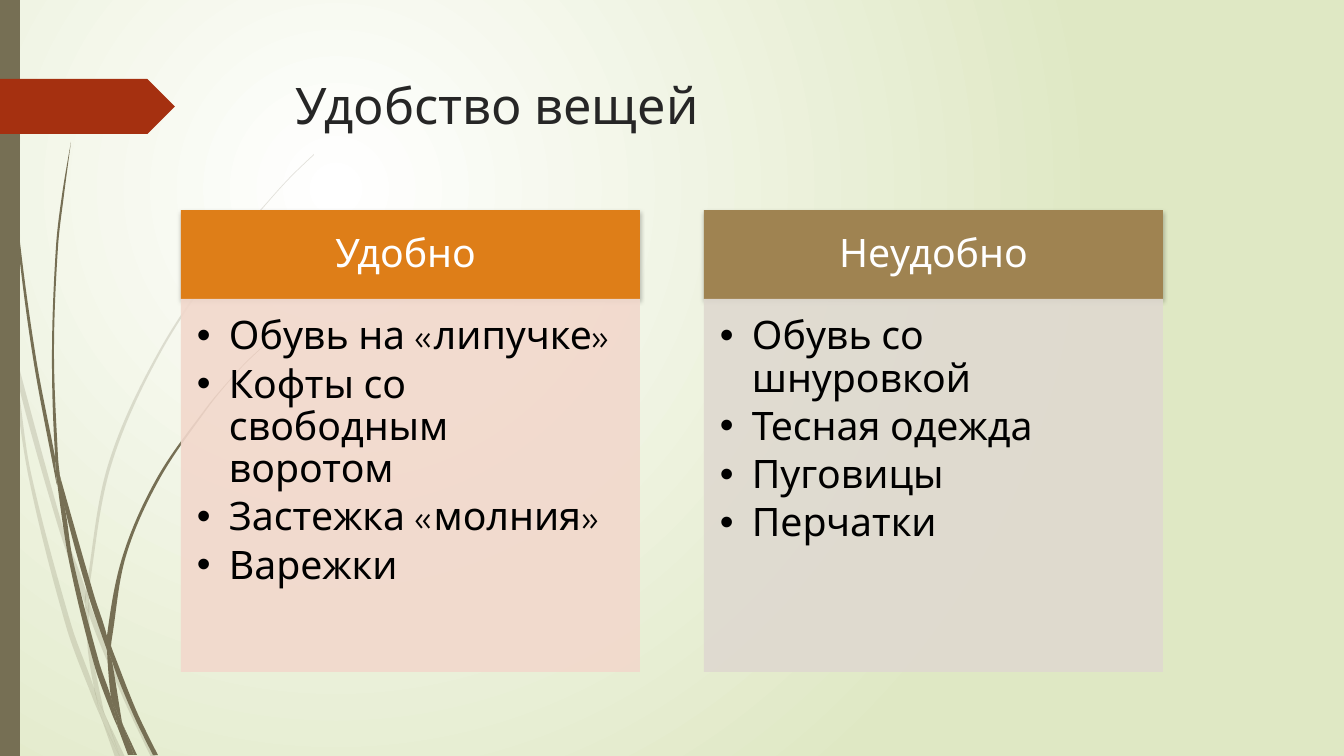
from dataclasses import dataclass
from math import hypot

from lxml.etree import SubElement
from pptx import Presentation
from pptx.dml.color import RGBColor
from pptx.enum.shapes import MSO_SHAPE
from pptx.enum.text import MSO_ANCHOR, PP_ALIGN
from pptx.oxml import parse_xml
from pptx.oxml.ns import nsdecls, qn
from pptx.shapes.autoshape import Shape
from pptx.slide import Slide
from pptx.util import Pt

EMU_PER_PX = 914400 / 100.8
FONT = "League Spartan"
OLIVE = "766F54"

Point = tuple[int, int]


@dataclass
class Grass:
    opacity: int
    pieces: list[list[Point]]


@dataclass
class Column:
    heading: str
    items: list[str]
    heading_fill: str
    body_fill: str


PALE_GRASS = Grass(20, [
    [(11, 353), (9, 325), (0, 284), (0, 301), (10, 347)],
    [(58, 526), (85, 604), (86, 591), (62, 524), (14, 348), (17, 379)],
    [(93, 612), (89, 601), (89, 615), (124, 700), (151, 757), (156, 757), (128, 698)],
    [(120, 757), (125, 757), (106, 717)],
    [(94, 688), (71, 624), (31, 473), (17, 379), (11, 353), (28, 474), (66, 626), (93, 699), (102, 720), (100, 713)],
    [(85, 604), (88, 651), (94, 688), (97, 698), (106, 717), (104, 712), (92, 651), (89, 615), (89, 613)],
    [(89, 589), (111, 466), (161, 352), (231, 247), (270, 200), (292, 176), (314, 155), (314, 154),
     (291, 176), (270, 199), (230, 246), (159, 351), (108, 465), (86, 589), (86, 591), (89, 601)],
    [(102, 720), (115, 757), (120, 757)],
    [(89, 613), (89, 615), (89, 601), (86, 591), (85, 604)],
    [(97, 698), (94, 688), (100, 713), (102, 720), (120, 757), (106, 717)],
])
DARK_GRASS = Grass(100, [
    [(7, 111), (17, 235), (33, 358), (56, 481), (57, 485), (55, 461), (55, 457),
     (36, 358), (19, 234), (8, 110), (5, 48), (4, 0), (3, 0), (4, 48)],
    [(89, 597), (107, 650), (107, 636), (94, 595), (60, 476), (65, 509)],
    [(114, 654), (111, 646), (112, 661), (133, 714), (153, 755), (158, 755), (137, 712)],
    [(111, 697), (99, 662), (73, 560), (65, 509), (57, 481), (69, 561), (94, 664), (112, 714), (118, 728), (117, 723)],
    [(60, 476), (58, 457), (54, 352), (58, 247), (64, 195), (71, 142), (62, 195), (56, 247), (52, 352), (55, 453)],
    [(134, 755), (137, 755), (123, 725)],
    [(57, 481), (65, 509), (60, 476), (55, 453), (55, 457)],
    [(112, 638), (126, 556), (159, 480), (207, 409), (233, 377), (247, 362), (263, 347), (262, 347),
     (247, 361), (233, 376), (206, 408), (157, 478), (123, 555), (107, 636), (111, 646)],
    [(118, 728), (128, 755), (132, 755)],
    [(107, 650), (111, 697), (117, 712), (123, 725), (122, 722), (112, 661), (110, 656)],
    [(107, 650), (110, 656), (112, 661), (111, 646), (107, 636)],
    [(117, 712), (111, 697), (117, 723), (118, 728), (131, 755), (134, 755), (123, 725)],
])

COLUMNS = [
    Column("Удобно ",
           ["Обувь на «липучке»", "Кофты со свободным воротом", "Застежка «молния»", "Варежки"],
           "DE7E18", "F2D8CC"),
    Column("Неудобно",
           ["Обувь со шнуровкой", "Тесная одежда", "Пуговицы", "Перчатки"],
           "9F8351", "DFD9D0"),
]
COLUMN_LEFT, COLUMN_WIDTH, COLUMN_GAP = 181, 459, 64
HEADING_TOP, HEADING_HEIGHT, BODY_HEIGHT = 210, 89, 373


def px(value: float) -> int:
    return round(value * EMU_PER_PX)


def color(value: str) -> RGBColor:
    return RGBColor.from_string(value)


def paint(shape: Shape, fill: str, opacity: int = 100) -> None:
    shape.shadow.inherit = False
    shape.line.fill.background()
    shape.fill.solid()
    shape.fill.fore_color.rgb = color(fill)
    if opacity < 100:
        solid_color = shape._element.spPr.find(qn("a:solidFill"))[0]
        SubElement(solid_color, qn("a:alpha"), val=str(opacity * 1000))


def add_block(slide: Slide, kind: MSO_SHAPE, box: tuple[int, int, int, int],
              fill: str, opacity: int = 100) -> Shape:
    shape = slide.shapes.add_shape(kind, *map(px, box))
    paint(shape, fill, opacity)
    return shape


def add_soft_shadow(shape: Shape) -> None:
    effects = shape._element.spPr.find(qn("a:effectLst"))
    effects.append(parse_xml(
        f'<a:outerShdw {nsdecls("a")} blurRad="38100" dist="25400" dir="5400000" rotWithShape="0">'
        '<a:srgbClr val="000000"><a:alpha val="25000"/></a:srgbClr></a:outerShdw>'))


def write_text(shape: Shape, lines: list[str], *, size: int, fill: str,
               insets: tuple[int, int, int, int], align: PP_ALIGN = PP_ALIGN.LEFT,
               anchor: MSO_ANCHOR = MSO_ANCHOR.TOP, line_spacing: float = 1.0,
               space_after: float = 0, bullet_indent: int = 0) -> None:
    frame = shape.text_frame
    frame.word_wrap = True
    frame.vertical_anchor = anchor
    frame.margin_left, frame.margin_top, frame.margin_right, frame.margin_bottom = map(px, insets)
    for index, line in enumerate(lines):
        paragraph = frame.paragraphs[0] if index == 0 else frame.add_paragraph()
        paragraph.alignment = align
        paragraph.line_spacing = line_spacing
        paragraph.space_after = Pt(space_after)
        if bullet_indent:
            properties = paragraph._p.get_or_add_pPr()
            properties.set("marL", str(px(bullet_indent)))
            properties.set("indent", str(-px(bullet_indent)))
            SubElement(properties, qn("a:buFont"), typeface="Arial")
            SubElement(properties, qn("a:buChar"), char="•")
        run = paragraph.add_run()
        run.text = line
        run.font.name = FONT
        run.font.size = Pt(size)
        run.font.color.rgb = color(fill)


def tangent(before: Point, here: Point, after: Point) -> tuple[float, float]:
    ax, ay = here[0] - before[0], here[1] - before[1]
    bx, by = after[0] - here[0], after[1] - here[1]
    is_corner = ax * bx + ay * by < 0.8 * hypot(ax, ay) * hypot(bx, by)
    length = hypot(ax + bx, ay + by)
    return (0, 0) if is_corner else ((ax + bx) / length, (ay + by) / length)


def bend_outline(shape: Shape) -> None:
    outline = shape._element.spPr.find(".//" + qn("a:path"))
    nodes = list(outline.iter(qn("a:pt")))
    points = [(int(node.get("x")), int(node.get("y"))) for node in nodes][:-1]
    count = len(points)
    tangents = [tangent(points[i - 1], points[i], points[(i + 1) % count]) for i in range(count)]
    for i, line in enumerate(outline.findall(qn("a:lnTo"))):
        j = (i + 1) % count
        start, end = points[i], points[j]
        reach = hypot(end[0] - start[0], end[1] - start[1]) / 3
        curve = SubElement(outline, qn("a:cubicBezTo"))
        for point, direction, distance in ((start, tangents[i], reach), (end, tangents[j], -reach), (end, (0, 0), 0)):
            x, y = (round(p + d * distance) for p, d in zip(point, direction))
            SubElement(curve, qn("a:pt"), x=str(x), y=str(y))
        outline.replace(line, curve)


def add_grass(slide: Slide, grass: Grass) -> None:
    for piece in grass.pieces:
        corners = [(px(x), px(y)) for x, y in piece]
        builder = slide.shapes.build_freeform(*corners[0])
        builder.add_line_segments(corners[1:] + corners[:1], close=True)
        shape = builder.convert_to_shape()
        bend_outline(shape)
        paint(shape, OLIVE, grass.opacity)


def add_column(slide: Slide, column: Column, left: int) -> None:
    heading = add_block(slide, MSO_SHAPE.RECTANGLE,
                        (left, HEADING_TOP, COLUMN_WIDTH, HEADING_HEIGHT), column.heading_fill)
    add_soft_shadow(heading)
    write_text(heading, [column.heading], size=28, fill="FFFFFF", insets=(22, 12, 22, 12),
               align=PP_ALIGN.CENTER, anchor=MSO_ANCHOR.MIDDLE, line_spacing=0.9)
    body = add_block(slide, MSO_SHAPE.RECTANGLE,
                     (left, HEADING_TOP + HEADING_HEIGHT, COLUMN_WIDTH, BODY_HEIGHT),
                     column.body_fill, 90)
    write_text(body, column.items, size=28, fill="000000", insets=(16, 17, 22, 24),
               line_spacing=0.9, space_after=4.2, bullet_indent=32)


def set_background(slide: Slide) -> None:
    fill = slide.background.fill
    fill.gradient()
    for stop, value in zip(fill.gradient_stops, ("FFFFFF", "DFE8C4")):
        stop.color.rgb = color(value)
    gradient = slide._element.find(".//" + qn("a:gradFill"))
    gradient.replace(gradient.find(qn("a:lin")), parse_xml(
        f'<a:path {nsdecls("a")} path="circle">'
        '<a:fillToRect l="50000" t="50000" r="100000" b="100000"/></a:path>'))


def main() -> None:
    presentation = Presentation()
    presentation.slide_width, presentation.slide_height = px(1344), px(756)
    slide = presentation.slides.add_slide(presentation.slide_layouts[6])
    set_background(slide)
    add_grass(slide, PALE_GRASS)
    add_grass(slide, DARK_GRASS)
    add_block(slide, MSO_SHAPE.RECTANGLE, (0, 0, 20, 756), OLIVE)
    add_block(slide, MSO_SHAPE.PENTAGON, (0, 79, 175, 55), "A53010")
    title = slide.shapes.add_textbox(*map(px, (286, 69, 983, 141)))
    write_text(title, ["Удобство вещей"], size=36, fill="262626", insets=(10, 5, 10, 5))
    for index, column in enumerate(COLUMNS):
        add_column(slide, column, COLUMN_LEFT + index * (COLUMN_WIDTH + COLUMN_GAP))
    presentation.save("out.pptx")


if __name__ == "__main__":
    main()
